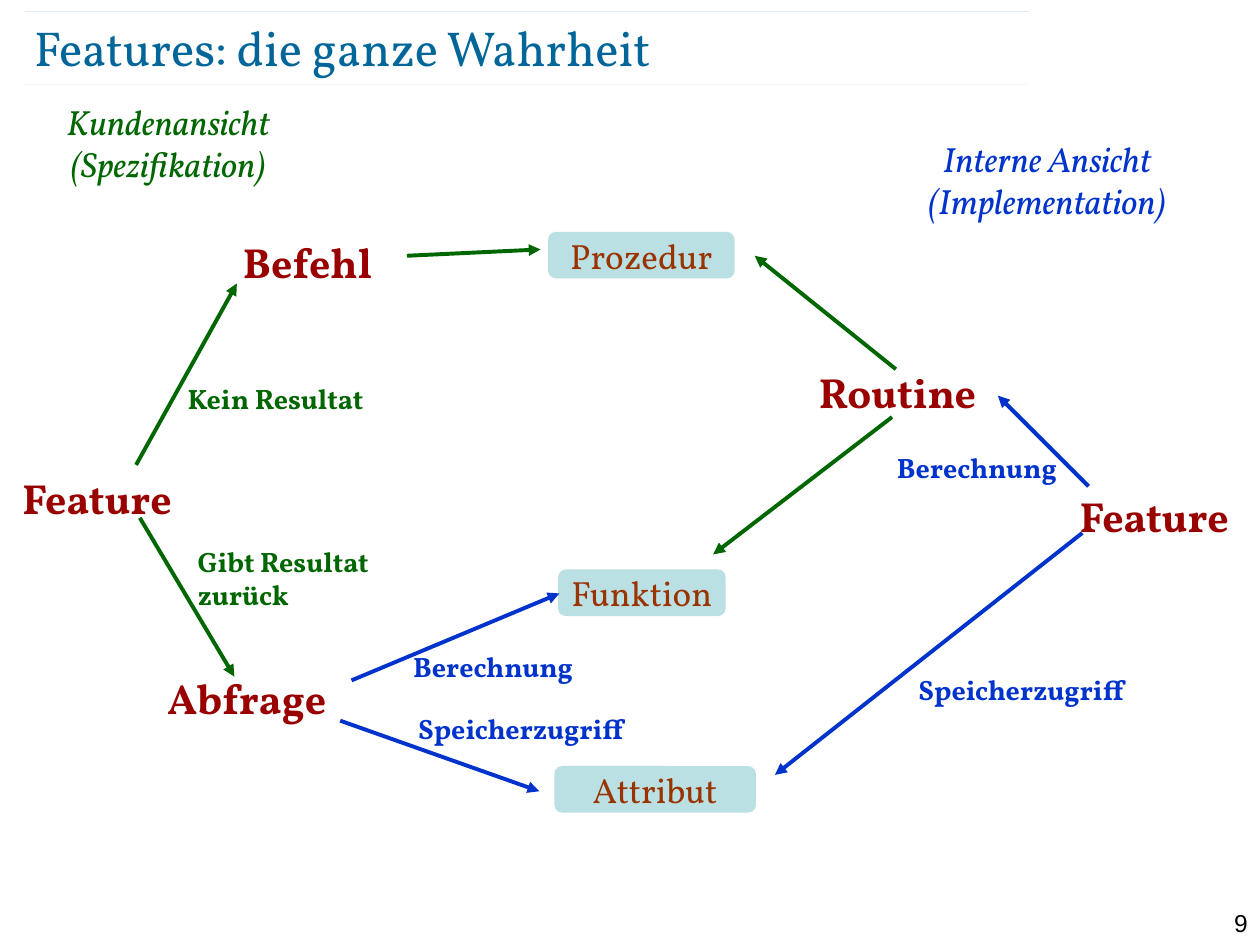
from typing import NamedTuple

from lxml import etree
from pptx import Presentation
from pptx.dml.color import RGBColor
from pptx.enum.shapes import MSO_CONNECTOR, MSO_SHAPE
from pptx.enum.text import MSO_ANCHOR, PP_ALIGN
from pptx.oxml.ns import qn
from pptx.util import Inches, Pt

LEFT, MID, RIGHT = PP_ALIGN.LEFT, PP_ALIGN.CENTER, PP_ALIGN.RIGHT
TOP, MIDDLE = MSO_ANCHOR.TOP, MSO_ANCHOR.MIDDLE
STRAIGHT, ROUND = MSO_CONNECTOR.STRAIGHT, MSO_SHAPE.ROUNDED_RECTANGLE

TEAL = RGBColor(0x00, 0x66, 0x99)
RED = RGBColor(0x99, 0x00, 0x00)
GREEN = RGBColor(0x00, 0x66, 0x00)
BLUE = RGBColor(0x00, 0x33, 0xCC)
BROWN = RGBColor(0x99, 0x33, 0x00)
PALE = RGBColor(0xBB, 0xE0, 0xE3)
BLACK = RGBColor(0x00, 0x00, 0x00)

FACE = "Vollkorn"
WIDTH, HEIGHT = Inches(10), Inches(7.5)
COL, ROW = WIDTH / 100, HEIGHT / 75  # grid of 100 columns by 75 rows


class Box(NamedTuple):
    x: float
    y: float
    w: float
    h: float


class Label(NamedTuple):
    text: str
    box: Box
    color: RGBColor


class Arrow(NamedTuple):
    start: tuple[float, float]
    end: tuple[float, float]
    color: RGBColor


TERMS = [
    Label("Feature", Box(84.7, 38.4, 15.3, 5), RED),
    Label("Befehl", Box(18.3, 18.3, 19.7, 5), RED),
    Label("Abfrage", Box(12.3, 52.9, 17.1, 5), RED),
    Label("Routine", Box(64, 28.6, 16, 5), RED),
    Label("Feature", Box(0.8, 37, 15, 5), RED),
]
KINDS = [
    Label("Prozedur", Box(43.5, 18.4, 14.8, 3.7), BROWN),
    Label("Funktion", Box(44.3, 45.2, 13.3, 3.7), BROWN),
    Label("Attribut", Box(44, 60.8, 16, 3.7), BROWN),
]
NOTES = [
    Label("Kein Resultat", Box(13.9, 29.8, 16.4, 3.7), GREEN),
    Label("Gibt Resultat zurück", Box(14.7, 42.7, 18.4, 6.4), GREEN),
    Label("Berechnung", Box(31.8, 51.1, 14.9, 3.7), BLUE),
    Label("Speicherzugriff", Box(32.2, 56, 21, 3.7), BLUE),
    Label("Berechnung", Box(70.2, 35.3, 14.9, 3.7), BLUE),
    Label("Speicherzugriff", Box(71.9, 52.9, 21.9, 3.7), BLUE),
]
VIEWS = [
    Label("Kundenansicht\n(Spezifikation)", Box(3.4, 8, 19.9, 6.7), GREEN),
    Label("Interne Ansicht (Implementation)", Box(70.8, 10.9, 24.6, 6.7), BLUE),
]
ARROWS = [
    Arrow((10.8, 36.9), (18.8, 22.5), GREEN),
    Arrow((11.1, 41.1), (18.6, 53.7), GREEN),
    Arrow((32.3, 20.3), (42.9, 19.8), GREEN),
    Arrow((71.1, 29.3), (59.9, 20.3), GREEN),
    Arrow((70.8, 33.1), (56.6, 44), GREEN),
    Arrow((27.9, 54), (44.4, 47.1), BLUE),
    Arrow((27, 57.2), (42.8, 62.8), BLUE),
    Arrow((85.9, 42.3), (61.5, 61.5), BLUE),
    Arrow((86.4, 38.6), (79.2, 31.4), BLUE),
]


def place(box: Box) -> tuple[int, int, int, int]:
    return (round(box.x * COL), round(box.y * ROW),
            round(box.w * COL), round(box.h * ROW))


def write(shape, text: str, *, size: float, color: RGBColor, face: str = FACE,
          bold: bool = False, italic: bool = False, align=LEFT, anchor=TOP,
          inset: bool = True) -> None:
    frame = shape.text_frame
    frame.word_wrap = True
    frame.vertical_anchor = anchor
    if not inset:
        frame.margin_left = frame.margin_right = 0
        frame.margin_top = frame.margin_bottom = 0
    para = frame.paragraphs[0]
    para.text = text
    para.alignment = align
    for run in para.runs:
        font = run.font
        font.name, font.size = face, Pt(size)
        font.bold, font.italic = bold, italic
        font.color.rgb = color


def add_text(slide, label: Label, **style) -> None:
    shape = slide.shapes.add_textbox(*place(label.box))
    write(shape, label.text, color=label.color, **style)


def add_kind(slide, label: Label) -> None:
    shape = slide.shapes.add_shape(ROUND, *place(label.box))
    shape.shadow.inherit = False
    shape.fill.solid()
    shape.fill.fore_color.rgb = PALE
    shape.line.fill.background()
    write(shape, label.text, size=20, color=label.color, align=MID, inset=False)


def add_line(slide, path: Arrow, width: float):
    (x1, y1), (x2, y2) = path.start, path.end
    line = slide.shapes.add_connector(
        STRAIGHT, round(x1 * COL), round(y1 * ROW),
        round(x2 * COL), round(y2 * ROW))
    line.line.color.rgb = path.color
    line.line.width = Pt(width)
    etree.SubElement(line._element.spPr, qn("a:effectLst"))
    return line


def add_arrow(slide, path: Arrow) -> None:
    line = add_line(slide, path, 2.25)
    etree.SubElement(line.line._get_or_add_ln(), qn("a:tailEnd"), type="triangle")


def add_rule(slide, x: float, y: float) -> None:
    line = add_line(slide, Arrow((x, y), (x + 79.7, y), TEAL), 0.1)
    tint = line._element.spPr.find(".//" + qn("a:srgbClr"))
    etree.SubElement(tint, qn("a:alpha"), val="35000")


def main() -> None:
    deck = Presentation()
    deck.slide_width, deck.slide_height = WIDTH, HEIGHT
    slide = deck.slides.add_slide(deck.slide_layouts[6])

    # Title between two hairlines, page number
    add_rule(slide, 1.8, 6.7)
    add_rule(slide, 2, 0.9)
    title = Label("Features: die ganze Wahrheit", Box(2.7, 1.3, 86.9, 4.8), TEAL)
    add_text(slide, title, size=28, anchor=MIDDLE, inset=False)
    page = Label("9", Box(94.5, 71.6, 5.5, 2.4), BLACK)
    add_text(slide, page, size=14, face="Arial", align=RIGHT)

    # Headings of the two views
    for view in VIEWS:
        add_text(slide, view, size=20, italic=True, align=MID, inset=False)

    # Terms, kinds of feature and the paths between them
    for kind in KINDS:
        add_kind(slide, kind)
    for arrow in ARROWS:
        add_arrow(slide, arrow)
    for term in TERMS:
        add_text(slide, term, size=24, bold=True)
    for note in NOTES:
        add_text(slide, note, size=16, bold=True)

    deck.save("out.pptx")


if __name__ == "__main__":
    main()
